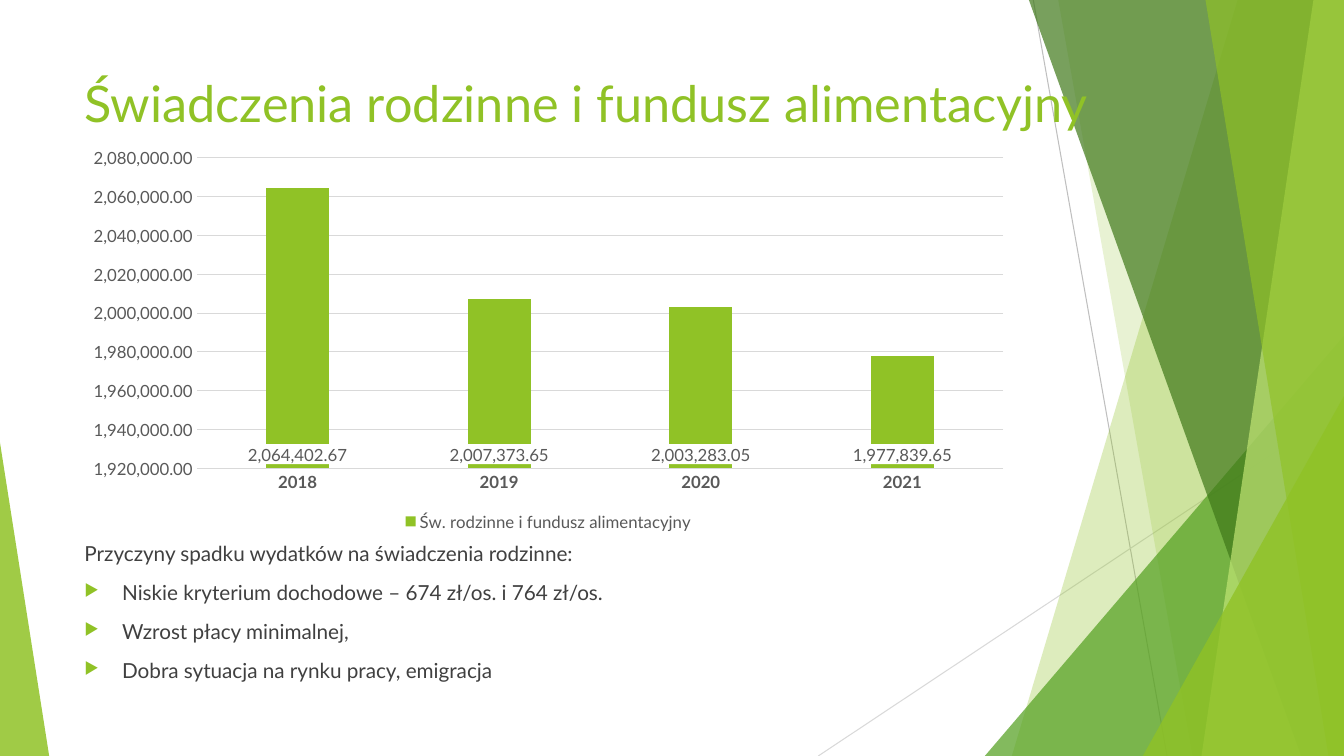
from dataclasses import dataclass

from lxml.etree import SubElement
from pptx import Presentation
from pptx.chart.data import CategoryChartData
from pptx.dml.color import RGBColor
from pptx.enum.chart import XL_CHART_TYPE as ChartType
from pptx.enum.chart import XL_LABEL_POSITION as LabelPosition
from pptx.enum.chart import XL_LEGEND_POSITION as LegendPosition
from pptx.enum.chart import XL_TICK_MARK as TickMark
from pptx.enum.shapes import MSO_CONNECTOR as Connector
from pptx.enum.shapes import MSO_SHAPE as Shape
from pptx.oxml import parse_xml
from pptx.oxml.ns import nsdecls, qn
from pptx.util import Cm, Pt


@dataclass(frozen=True)
class Theme:
    """Colours, font and type sizes of the slide."""

    font: str = "Lato"
    lime: str = "90C226"
    pale: str = "C0E474"
    green: str = "54A021"
    forest: str = "3F7819"
    white: str = "FFFFFF"
    ink: str = "404040"
    chart_ink: str = "595959"
    grid: str = "D9D9D9"
    ray: str = "BFBFBF"
    title_size: float = 36
    body_size: float = 14.8
    chart_size: float = 12
    hairline: float = 0.75


THEME = Theme()
WIDTH, HEIGHT = 33.87, 19.05
MONEY = "#,##0.00"

RAYS = [
    ((26.04, 0), (29.41, HEIGHT), THEME.ray),
    ((WIDTH, 10.24), (20.62, HEIGHT), THEME.grid),
]
BACK_PANELS = [(31.19, 25.5, THEME.lime, 30), (26.67, 30.05, THEME.lime, 20)]
FRONT_PANELS = [
    (25.93, 32.79, THEME.forest, 70),
    (33.1, 30.28, THEME.pale, 70),
    (30.38, 33.48, THEME.lime, 65),
]
REASONS_HEADING = "Przyczyny spadku wydatków na świadczenia rodzinne:"
REASONS = [
    "Niskie kryterium dochodowe – 674 zł/os. i 764 zł/os.",
    "Wzrost płacy minimalnej,",
    "Dobra sytuacja na rynku pracy, emigracja",
]
SPENDING = {"2018": 2064402.67, "2019": 2007373.65, "2020": 2003283.05, "2021": 1977839.65}


def apply(target, values):
    """Set every attribute named in values on the target."""
    for name, value in values.items():
        setattr(target, name, value)


def style_font(font, size, colour, bold=False):
    """Give a font the theme face, a size, a colour and a weight."""
    apply(font, {"name": THEME.font, "size": Pt(size), "bold": bold})
    font.color.rgb = RGBColor.from_string(colour)


def style_line(line, colour):
    """Draw a hairline in the colour."""
    line.color.rgb = RGBColor.from_string(colour)
    line.width = Pt(THEME.hairline)


def fill_glass(shape, colour, opacity):
    """Fill a shape with a translucent colour and no outline."""
    shape.shadow.inherit = False
    shape.line.fill.background()
    shape.fill.solid()
    shape.fill.fore_color.rgb = RGBColor.from_string(colour)
    tint = shape.fill._xPr.find(qn("a:solidFill"))[0]
    SubElement(tint, qn("a:alpha"), val=str(opacity * 1000))


def add_ray(slide, start, end, colour):
    """Add a thin decorative line."""
    ray = slide.shapes.add_connector(Connector.STRAIGHT, *map(Cm, start + end))
    style_line(ray.line, colour)
    SubElement(ray._element.spPr, qn("a:effectLst"))


def add_panel(slide, top_x, bottom_x, colour, opacity):
    """Add a full-height panel with a slanted left edge."""
    outline = slide.shapes.build_freeform(Cm(top_x), 0)
    corners = [(WIDTH, 0), (WIDTH, HEIGHT), (bottom_x, HEIGHT)]
    outline.add_line_segments([(Cm(x), Cm(y)) for x, y in corners], close=True)
    fill_glass(outline.convert_to_shape(), colour, opacity)


def add_wedge(slide, left, width, top, apex, colour, opacity):
    """Add a triangle standing on the bottom edge of the slide."""
    box = map(Cm, (left, top, width, HEIGHT - top))
    wedge = slide.shapes.add_shape(Shape.ISOSCELES_TRIANGLE, *box)
    wedge.adjustments[0] = apex
    fill_glass(wedge, colour, opacity)


def add_text(slide, box, lines, size, colour):
    """Add a wrapped text box with one paragraph per line."""
    frame = slide.shapes.add_textbox(*map(Cm, box)).text_frame
    frame.word_wrap = True
    for index, line in enumerate(lines):
        paragraph = frame.add_paragraph() if index else frame.paragraphs[0]
        paragraph.text = line
        if index:
            add_bullet(paragraph)
            paragraph.space_before = Pt(10)
        style_font(paragraph.runs[0].font, size, colour)


def add_bullet(paragraph):
    """Give a paragraph a hanging arrow bullet."""
    properties = paragraph._p.get_or_add_pPr()
    indent = Cm(0.95)
    properties.set("marL", str(indent))
    properties.set("indent", str(-indent))
    SubElement(SubElement(properties, qn("a:buClr")), qn("a:srgbClr"), val=THEME.lime)
    SubElement(properties, qn("a:buSzPct"), val="80000")
    SubElement(properties, qn("a:buChar"), char="▶")


def style_axes(chart):
    """Format the year axis and the amount axis."""
    years, amounts = chart.category_axis, chart.value_axis
    for axis in (years, amounts):
        apply(axis, {"major_tick_mark": TickMark.NONE, "minor_tick_mark": TickMark.NONE})
        style_font(axis.tick_labels.font, THEME.chart_size, THEME.chart_ink, axis is years)
    style_line(years.format.line, THEME.grid)
    apply(amounts, {"minimum_scale": 1920000, "maximum_scale": 2080000, "major_unit": 20000})
    apply(amounts.tick_labels, {"number_format": MONEY, "number_format_is_linked": False})
    amounts.format.line.fill.background()
    style_line(amounts.major_gridlines.format.line, THEME.grid)


def style_labels(labels):
    """Show values on a white ground at the foot of the columns."""
    apply(labels, {
        "show_value": True,
        "number_format": MONEY,
        "number_format_is_linked": False,
        "position": LabelPosition.INSIDE_BASE,
    })
    style_font(labels.font, THEME.chart_size, THEME.chart_ink)
    ground = parse_xml(
        f'<c:spPr {nsdecls("c", "a")}><a:solidFill><a:srgbClr val="{THEME.white}"/>'
        "</a:solidFill></c:spPr>"
    )
    labels._element.find(qn("c:txPr")).addprevious(ground)


def add_spending_chart(slide, box):
    """Add the column chart of yearly spending."""
    spending = CategoryChartData(number_format=MONEY)
    spending.categories = list(SPENDING)
    spending.add_series("Św. rodzinne i fundusz alimentacyjny", SPENDING.values())
    chart = slide.shapes.add_chart(ChartType.COLUMN_STACKED, *map(Cm, box), spending).chart
    style_font(chart.font, THEME.chart_size, THEME.chart_ink)
    apply(chart, {"has_title": False, "has_legend": True})
    apply(chart.legend, {"position": LegendPosition.BOTTOM, "include_in_layout": False})
    style_font(chart.legend.font, THEME.chart_size, THEME.chart_ink)
    style_axes(chart)
    columns = chart.plots[0]
    apply(columns, {"gap_width": 219, "overlap": 100, "vary_by_categories": False})
    benefits = columns.series[0]
    benefits.format.fill.solid()
    benefits.format.fill.fore_color.rgb = RGBColor.from_string(THEME.lime)
    style_labels(benefits.data_labels)


def main():
    """Build the slide and save it."""
    deck = Presentation()
    apply(deck, {"slide_width": Cm(WIDTH), "slide_height": Cm(HEIGHT)})
    slide = deck.slides.add_slide(deck.slide_layouts[6])
    for ray in RAYS:
        add_ray(slide, *ray)
    for panel in BACK_PANELS:
        add_panel(slide, *panel)
    add_wedge(slide, 24.82, 9.05, 8.46, 1, THEME.green, 72)
    for panel in FRONT_PANELS:
        add_panel(slide, *panel)
    add_wedge(slide, 28.8, 5.07, 9.98, 1, THEME.lime, 80)
    add_wedge(slide, 0, 1.24, 11.15, 0, THEME.lime, 85)
    title = "Świadczenia rodzinne i fundusz alimentacyjny"
    add_text(slide, (1.88, 1.7, 27.94, 2.24), [title], THEME.title_size, THEME.lime)
    add_spending_chart(slide, (1.88, 3.53, 23.88, 9.96))
    reasons = [REASONS_HEADING, *REASONS]
    add_text(slide, (1.88, 13.51, 24.36, 3.86), reasons, THEME.body_size, THEME.ink)
    deck.save("out.pptx")


if __name__ == "__main__":
    main()
